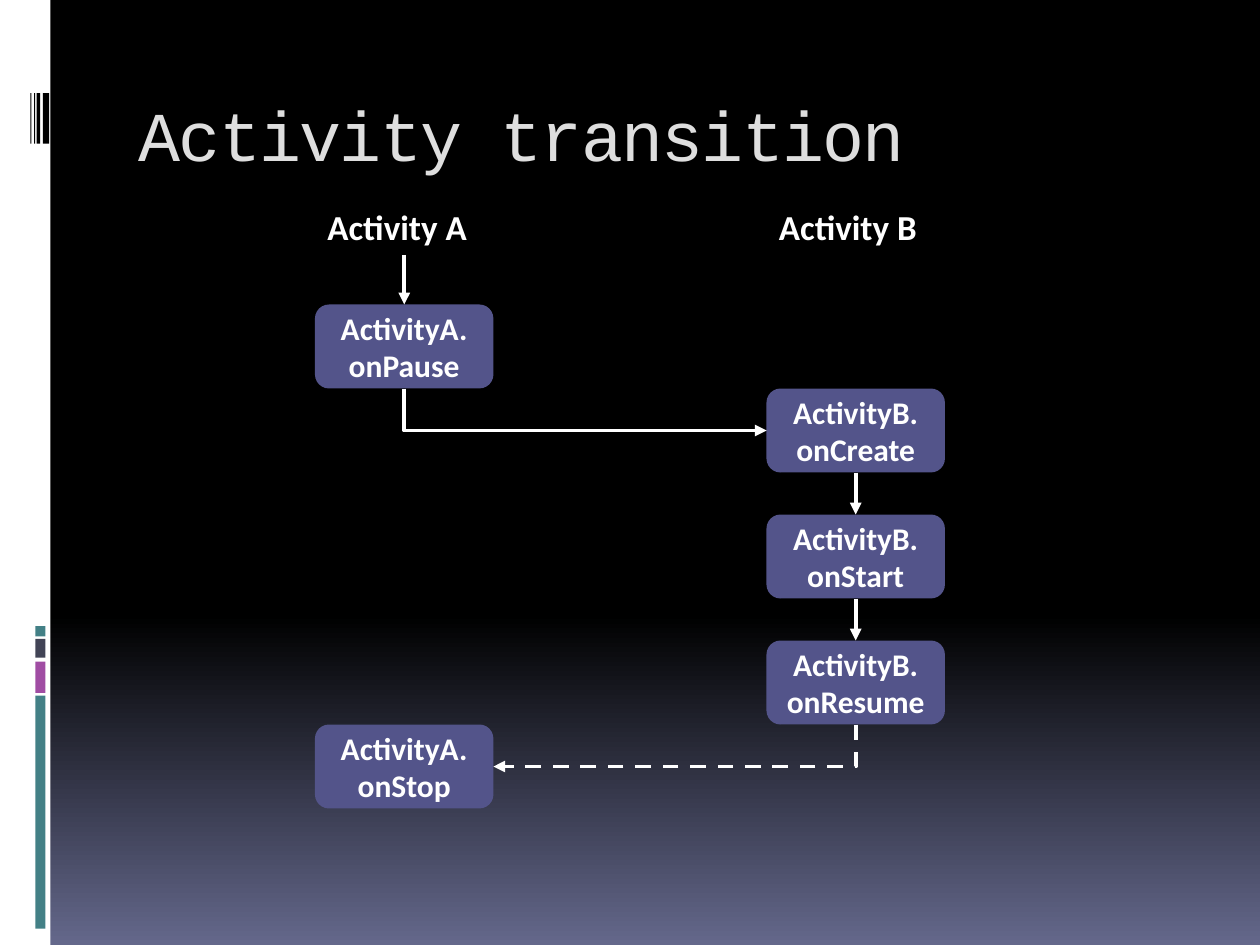
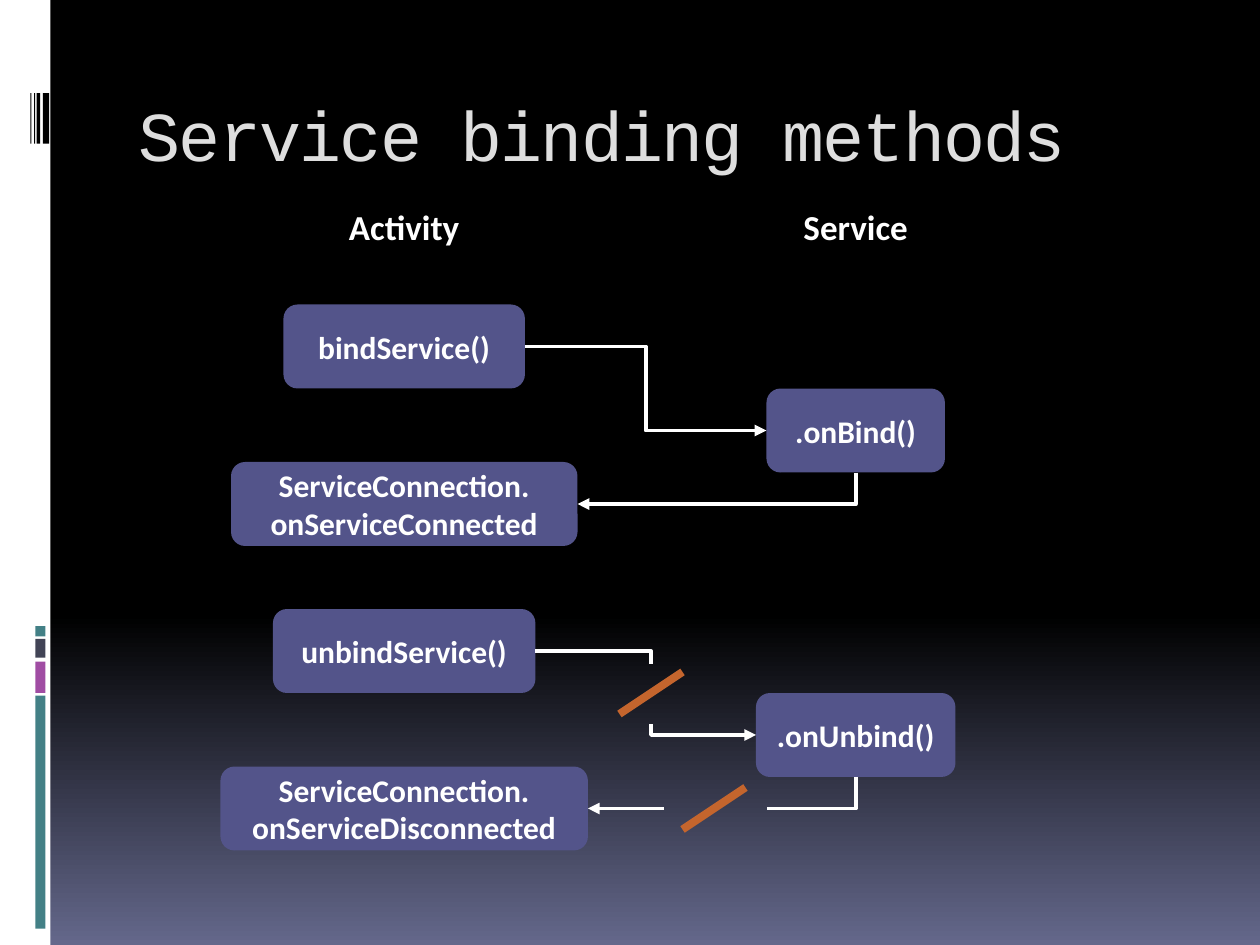
from copy import deepcopy
from dataclasses import dataclass
from typing import Any

from lxml import etree
from pptx import Presentation
from pptx.dml.color import RGBColor
from pptx.enum.dml import MSO_LINE
from pptx.enum.shapes import MSO_CONNECTOR, MSO_SHAPE
from pptx.enum.text import MSO_ANCHOR, MSO_AUTO_SIZE, PP_ALIGN
from pptx.oxml.ns import qn
from pptx.util import Inches, Pt

RECTANGLE, ROUNDED = MSO_SHAPE.RECTANGLE, MSO_SHAPE.ROUNDED_RECTANGLE
STRAIGHT, ELBOW = MSO_CONNECTOR.STRAIGHT, MSO_CONNECTOR.ELBOW
LEFT, CENTER = PP_ALIGN.LEFT, PP_ALIGN.CENTER
MIDDLE = MSO_ANCHOR.MIDDLE
DASH = MSO_LINE.DASH
FIXED_SIZE, GROW = MSO_AUTO_SIZE.NONE, MSO_AUTO_SIZE.SHAPE_TO_FIT_TEXT

BLACK = RGBColor(0x00, 0x00, 0x00)
WHITE = RGBColor(0xFF, 0xFF, 0xFF)
DUSK = RGBColor(0x64, 0x68, 0x8B)
TITLE_GREY = RGBColor(0xDE, 0xDE, 0xDE)
INDIGO = RGBColor(0x53, 0x54, 0x8A)
TEAL = RGBColor(0x43, 0x80, 0x86)
PURPLE = RGBColor(0xA0, 0x4D, 0xA3)
SLATE = RGBColor(0x42, 0x44, 0x56)
ORANGE = RGBColor(0xC4, 0x65, 0x2D)

TITLE_FONT, BODY_FONT = "Courier New", "Calibri"
SLIDE_WIDTH, SLIDE_HEIGHT = Inches(10), Inches(7.5)
CELL = SLIDE_WIDTH // 120
CALLER_COLUMN, CALLEE_COLUMN = 38.5, 81.5
BOX_WIDTH, BOX_HEIGHT = 17, 8
HEADING_ROW, HEADING_HEIGHT = 19, 5.28
TOP_SITE, LEFT_SITE, BOTTOM_SITE, RIGHT_SITE = range(4)
DOWN_FIRST, ACROSS_FIRST, HALFWAY = "down first", "across first", "halfway"

SIDEBAR = [
    (0, 0, 0.4, 7.5, WHITE),
    (0.28, 5.52, 0.08, 1.85, TEAL),
    (0.28, 5.25, 0.08, 0.25, PURPLE),
    (0.28, 5.07, 0.08, 0.15, SLATE),
    (0.28, 4.97, 0.08, 0.08, TEAL),
    (0.34, 0.74, 0.05, 0.4, BLACK),
    (0.29, 0.74, 0.03, 0.4, BLACK),
    (0.27, 0.74, 0.01, 0.4, BLACK),
    (0.24, 0.74, 0.01, 0.4, BLACK),
]


@dataclass
class Anchor:
    """A line end on the slide, optionally glued to a site of a box."""

    x: int
    y: int
    box: Any = None
    site: int = 0


def cells(count):
    """Convert grid cells to a whole length."""
    return round(count * CELL)


def point(column, row):
    """Return a free line end at a grid position."""
    return Anchor(cells(column), cells(row))


def edge(box, site):
    """Return the line end at the middle of one side of a box."""
    across = {LEFT_SITE: 0, RIGHT_SITE: box.width}.get(site, box.width // 2)
    down = {TOP_SITE: 0, BOTTOM_SITE: box.height}.get(site, box.height // 2)
    return Anchor(box.left + across, box.top + down, box, site)


def style_runs(paragraph, font_name, size, color, bold=False):
    """Format every run of a paragraph."""
    for run in paragraph.runs:
        run.font.name = font_name
        run.font.size = Pt(size)
        run.font.bold = bold
        run.font.color.rgb = color


def style_background(master):
    """Fill the master with black fading to dusk at the foot."""
    fill = master.background.fill
    fill.gradient()
    fill.gradient_angle = 270
    first_stop = fill.gradient_stops[0]._gs
    first_stop.addnext(deepcopy(first_stop))
    for stop, position, color in zip(fill.gradient_stops, (0, 0.65, 1), (BLACK, BLACK, DUSK)):
        stop.position = position
        stop.color.rgb = color


def add_sidebar(master, slide):
    """Draw the sidebar and move it behind everything on the master."""
    for index, (left, top, width, height, color) in enumerate(SIDEBAR):
        bar = slide.shapes.add_shape(
            RECTANGLE, Inches(left), Inches(top), Inches(width), Inches(height))
        bar.shadow.inherit = False
        bar.fill.solid()
        bar.fill.fore_color.rgb = color
        bar.line.fill.background()
        bar._element.nvSpPr.cNvPr.set("id", str(100 + index))
        master.shapes._spTree.insert(2 + index, bar._element)


def place_title(layout):
    """Set the title position that all slides inherit."""
    title = layout.placeholders[0]
    title.left, title.top = Inches(1), Inches(0.56)
    title.width, title.height = Inches(8.5), Inches(1)


def add_titled_slide(deck, layout, title):
    """Add a slide with its formatted title."""
    slide = deck.slides.add_slide(layout)
    frame = slide.shapes.title.text_frame
    frame.text = title
    frame.auto_size = FIXED_SIZE
    frame.vertical_anchor = MIDDLE
    paragraph = frame.paragraphs[0]
    paragraph.alignment = LEFT
    style_runs(paragraph, TITLE_FONT, 40, TITLE_GREY)
    paragraph.runs[0]._r.get_or_add_rPr().set("spc", "-100")
    return slide


def add_heading(slide, text, center, alignment):
    """Add the heading of one column of the diagram."""
    heading = slide.shapes.add_textbox(
        cells(center - BOX_WIDTH / 2), cells(HEADING_ROW), cells(BOX_WIDTH), cells(HEADING_HEIGHT))
    frame = heading.text_frame
    frame.word_wrap = True
    frame.auto_size = GROW
    frame.text = text
    frame.paragraphs[0].alignment = alignment
    style_runs(frame.paragraphs[0], BODY_FONT, 20, WHITE, bold=True)
    return heading


def add_method(slide, text, center, row, width=BOX_WIDTH):
    """Add a rounded method box centred on a column."""
    method = slide.shapes.add_shape(
        ROUNDED, cells(center - width / 2), cells(row), cells(width), cells(BOX_HEIGHT))
    method.shadow.inherit = False
    method.fill.solid()
    method.fill.fore_color.rgb = INDIGO
    method.line.fill.background()
    frame = method.text_frame
    frame.word_wrap = True
    frame.vertical_anchor = MIDDLE
    paragraph = frame.paragraphs[0]
    paragraph.text = text
    paragraph.alignment = CENTER
    style_runs(paragraph, BODY_FONT, 18, WHITE, bold=True)
    return method


def bend_once(connector, start, end, bend):
    """Give an elbow connector a single corner."""
    properties = connector._element.spPr
    properties.find(qn("a:prstGeom")).set("prst", "bentConnector2")
    if bend == DOWN_FIRST:
        width, height = abs(end.y - start.y), abs(end.x - start.x)
        connector.left = (start.x + end.x - width) // 2
        connector.top = (start.y + end.y - height) // 2
        connector.width, connector.height = width, height
        rightward = end.x > start.x
        properties.xfrm.flipH = rightward
        properties.xfrm.set("rot", str((270 if rightward else 90) * 60000))


def add_link(slide, start, end, bend=None, arrow=True, dash=None, color=WHITE, weight=2.25):
    """Draw a straight or bent line between two ends."""
    link = slide.shapes.add_connector(
        ELBOW if bend else STRAIGHT, start.x, start.y, end.x, end.y)
    if start.box is not None:
        link.begin_connect(start.box, start.site)
    if end.box is not None:
        link.end_connect(end.box, end.site)
    if bend in (DOWN_FIRST, ACROSS_FIRST):
        bend_once(link, start, end, bend)
    link.line.color.rgb = color
    link.line.width = Pt(weight)
    if dash:
        link.line.dash_style = dash
    if arrow:
        etree.SubElement(link.line._get_or_add_ln(), qn("a:tailEnd"), type="triangle")
    etree.SubElement(link._element.spPr, qn("a:effectLst"))


def add_break_mark(slide, column, row):
    """Draw the slanted mark of a broken call."""
    add_link(slide, point(column, row), point(column - 6, row + 4),
             arrow=False, color=ORANGE, weight=4.5)


def build_activity_transition(deck, layout):
    """Build the slide on moving from one activity to another."""
    slide = add_titled_slide(deck, layout, "Activity transition")
    heading_a = add_heading(slide, "Activity A", CALLER_COLUMN, LEFT)
    add_heading(slide, "Activity B", CALLEE_COLUMN, LEFT)
    pause = add_method(slide, "ActivityA.\nonPause", CALLER_COLUMN, 29)
    create, start, resume = [
        add_method(slide, f"ActivityB.\n{name}", CALLEE_COLUMN, 37 + 12 * step)
        for step, name in enumerate(("onCreate", "onStart", "onResume"))]
    stop = add_method(slide, "ActivityA.\nonStop", CALLER_COLUMN, 69)
    add_link(slide, edge(pause, BOTTOM_SITE), edge(create, LEFT_SITE), DOWN_FIRST)
    for upper, lower in ((heading_a, pause), (create, start), (start, resume)):
        add_link(slide, edge(upper, BOTTOM_SITE), edge(lower, TOP_SITE))
    add_link(slide, edge(resume, BOTTOM_SITE), edge(stop, RIGHT_SITE), DOWN_FIRST, dash=DASH)
    return slide


def build_service_binding(deck, layout):
    """Build the slide on binding and unbinding a service."""
    slide = add_titled_slide(deck, layout, "Service binding methods")
    add_heading(slide, "Activity", CALLER_COLUMN, CENTER)
    add_heading(slide, "Service", CALLEE_COLUMN, CENTER)
    bind = add_method(slide, "bindService()", CALLER_COLUMN, 29, 23)
    on_bind = add_method(slide, ".onBind()", CALLEE_COLUMN, 37)
    connected = add_method(
        slide, "ServiceConnection. onServiceConnected", CALLER_COLUMN, 44, 33)
    unbind = add_method(slide, "unbindService()", CALLER_COLUMN, 58, 25)
    on_unbind = add_method(slide, ".onUnbind()", CALLEE_COLUMN, 66, 19)
    disconnected = add_method(
        slide, "ServiceConnection. onServiceDisconnected", CALLER_COLUMN, 73, 35)

    add_link(slide, edge(bind, RIGHT_SITE), edge(on_bind, LEFT_SITE), HALFWAY)
    add_link(slide, edge(on_bind, BOTTOM_SITE), edge(connected, RIGHT_SITE), DOWN_FIRST)

    add_link(slide, edge(unbind, RIGHT_SITE), point(62, 63.2), ACROSS_FIRST, arrow=False)
    add_link(slide, point(62, 69), edge(on_unbind, LEFT_SITE), DOWN_FIRST)
    add_link(slide, edge(on_unbind, BOTTOM_SITE), point(73, 77), DOWN_FIRST, arrow=False)
    add_link(slide, point(63.2, 77), edge(disconnected, RIGHT_SITE))
    add_break_mark(slide, 65, 64)
    add_break_mark(slide, 71, 75)
    return slide


def main():
    """Build and save the deck."""
    deck = Presentation()
    deck.slide_width, deck.slide_height = SLIDE_WIDTH, SLIDE_HEIGHT
    layout = deck.slide_layouts.get_by_name("Title Only")
    style_background(deck.slide_master)
    place_title(layout)
    transition = build_activity_transition(deck, layout)
    build_service_binding(deck, layout)
    add_sidebar(deck.slide_master, transition)
    deck.save("out.pptx")


if __name__ == "__main__":
    main()
